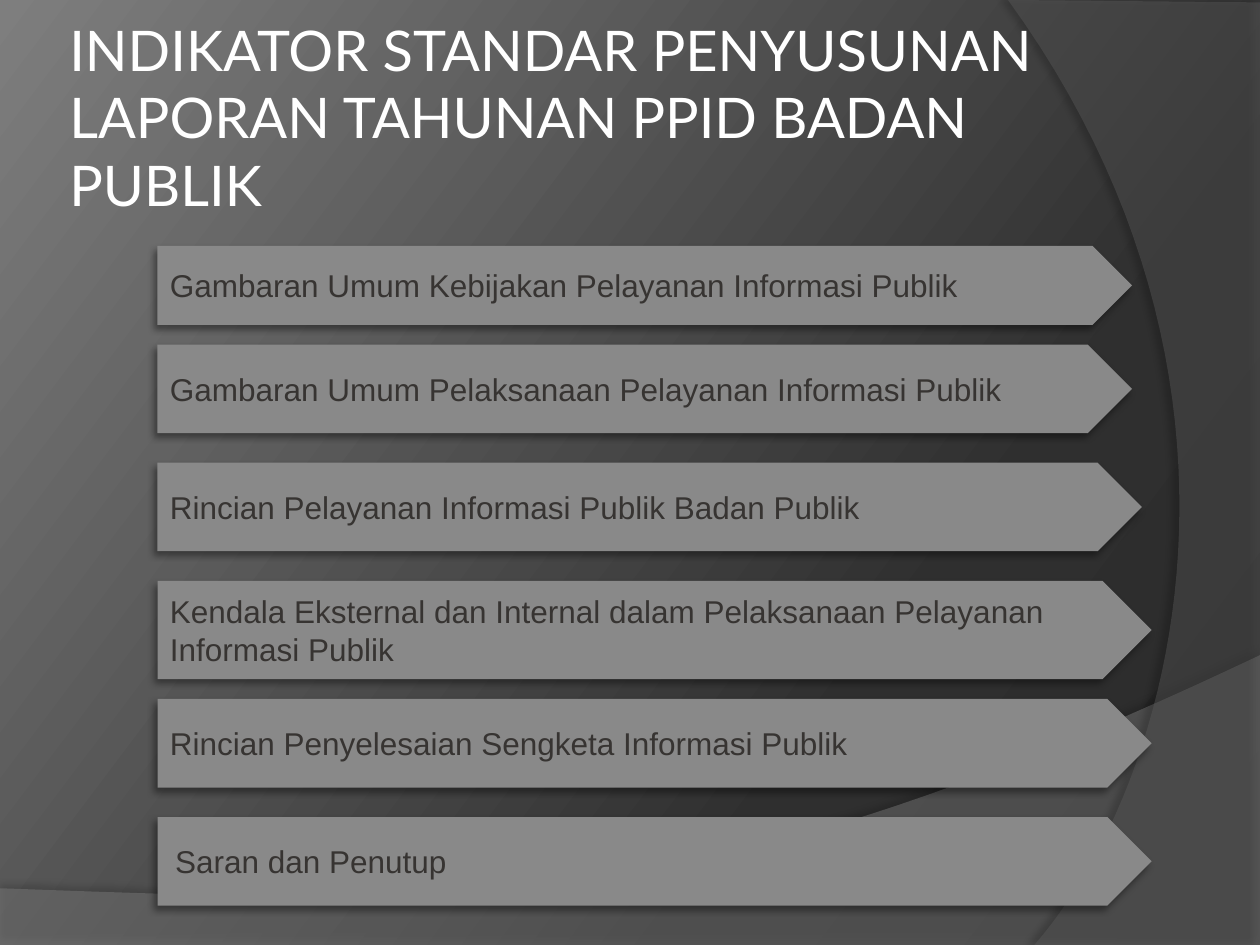
from lxml import etree
from pptx import Presentation
from pptx.dml.color import RGBColor
from pptx.enum import shapes, text
from pptx.oxml import ns
from pptx.util import Pt

TITLE = "INDIKATOR STANDAR PENYUSUNAN LAPORAN TAHUNAN PPID BADAN PUBLIK"
# wording, top, width, height
INDICATORS = [
    ("Gambaran Umum Kebijakan Pelayanan Informasi Publik", 140.6, 556.9, 45),
    ("Gambaran Umum Pelaksanaan Pelayanan Informasi Publik", 196.9, 556.9, 50.6),
    ("Rincian Pelayanan Informasi Publik Badan Publik", 264.4, 562.5, 50.6),
    ("Kendala Eksternal dan Internal dalam Pelaksanaan Pelayanan Informasi Publik",
     331.9, 568.1, 56.2),
    ("Rincian Penyelesaian Sengketa Informasi Publik", 399.4, 568.1, 50.6),
    ("Saran dan Penutup", 466.9, 568.1, 50.6),
]
INDICATOR_LEFT = 90
CLOSING_INDENT = 3

WHITE = RGBColor(0xFF, 0xFF, 0xFF)
INK = RGBColor(0x37, 0x34, 0x32)
ARROW_GRAY = RGBColor(0x89, 0x89, 0x89)
WAVE_GRAY = RGBColor(0x7F, 0x7F, 0x7F)
ARC_GRAY = RGBColor(0x5E, 0x5E, 0x5E)
BACKDROP_STOPS = [(0, RGBColor(0x28, 0x28, 0x28)), (30, RGBColor(0x2F, 0x2F, 0x2F)),
                  (100, RGBColor(0x7E, 0x7E, 0x7E))]
BACKDROP_ANGLE = 217


def child(parent, tag, **attributes):
    element = etree.SubElement(parent, ns.qn(tag))
    for key, value in attributes.items():
        element.set(key, str(value))
    return element


def add_shadow(shape, opacity, distance, angle):
    shape.shadow.inherit = False
    effects = shape._element.spPr.find(ns.qn("a:effectLst"))
    shadow = child(effects, "a:outerShdw", blurRad=Pt(4), dist=Pt(distance),
                   dir=angle * 60000, algn="ctr", rotWithShape=0)
    black = child(shadow, "a:srgbClr", val="000000")
    child(black, "a:alpha", val=opacity * 1000)


def bezier(p0, p1, p2, p3, steps=48):
    """Points along a cubic curve, without its start."""
    points = []
    for step in range(1, steps + 1):
        t = step / steps
        weights = ((1 - t) ** 3, 3 * t * (1 - t) ** 2, 3 * t * t * (1 - t), t ** 3)
        points.append(tuple(sum(w * p[axis] for w, p in zip(weights, (p0, p1, p2, p3)))
                            for axis in (0, 1)))
    return points


def add_sweep(slide, points, color, opacity):
    """Translucent closed outline through the points."""
    corners = [(Pt(x), Pt(y)) for x, y in points]
    builder = slide.shapes.build_freeform(*corners[0])
    builder.add_line_segments(corners[1:], close=True)
    sweep = builder.convert_to_shape()
    sweep.fill.solid()
    sweep.fill.fore_color.rgb = color
    tint = sweep._element.spPr.find(ns.qn("a:solidFill"))[0]
    child(tint, "a:alpha", val=opacity * 1000)
    sweep.line.fill.background()
    return sweep


def paint_backdrop(slide):
    fill = slide.background.fill
    fill.gradient()
    gradient = slide._element.cSld.find(".//" + ns.qn("a:gradFill"))
    for part in list(gradient):
        gradient.remove(part)
    stops = child(gradient, "a:gsLst")
    for position, color in BACKDROP_STOPS:
        stop = child(stops, "a:gs", pos=position * 1000)
        child(stop, "a:srgbClr", val=color)
    child(gradient, "a:lin", ang=BACKDROP_ANGLE * 60000, scaled=0)


def write(frame, wording, font_name, size, color):
    frame.word_wrap = True
    frame.auto_size = text.MSO_AUTO_SIZE.NONE
    frame.vertical_anchor = text.MSO_ANCHOR.MIDDLE
    paragraph = frame.paragraphs[0]
    paragraph.alignment = text.PP_ALIGN.LEFT
    run = paragraph.add_run()
    run.text = wording
    run.font.name = font_name
    run.font.size = Pt(size)
    run.font.color.rgb = color
    return paragraph


def add_indicator(slide, wording, top, width, height):
    arrow = slide.shapes.add_shape(shapes.MSO_SHAPE.PENTAGON, Pt(INDICATOR_LEFT), Pt(top),
                                   Pt(width), Pt(height))
    arrow.fill.solid()
    arrow.fill.fore_color.rgb = ARROW_GRAY
    arrow.line.fill.background()
    add_shadow(arrow, 40, 3, 135)
    return write(arrow.text_frame, wording, "Arial", 18, INK)


def main():
    deck = Presentation()
    deck.slide_width, deck.slide_height = Pt(720), Pt(540)
    slide = deck.slides.add_slide(deck.slide_layouts[5])
    paint_backdrop(slide)

    wave = [(0, 507.6), (0, 540), (720, 540), (720, 374.4)]
    wave += bezier(wave[-1], (402.5, 524.9), (281.5, 517.7), wave[0])
    add_shadow(add_sweep(slide, wave, WAVE_GRAY, 45), 35, 3.5, 270)

    arc = [(720, 1.4), (720, 540), (591.1, 540)]
    arc += bezier(arc[-1], (673.2, 445.7), (733, 216), (576, 0))
    add_shadow(add_sweep(slide, arc, ARC_GRAY, 40), 45, 4, 180)

    title = slide.shapes.title
    slide.shapes._spTree.append(title._element)  # in front of the sweeps
    title.left, title.top, title.width, title.height = Pt(36), Pt(21.6), Pt(588.2), Pt(90)
    frame = title.text_frame
    frame.margin_left = frame.margin_right = frame.margin_top = frame.margin_bottom = Pt(3.6)
    write(frame, TITLE, "Lato", 32, WHITE)

    for indicator in INDICATORS:
        closing = add_indicator(slide, *indicator)
    closing._p.get_or_add_pPr().set("marL", str(Pt(CLOSING_INDENT)))

    deck.save("out.pptx")


if __name__ == "__main__":
    main()
